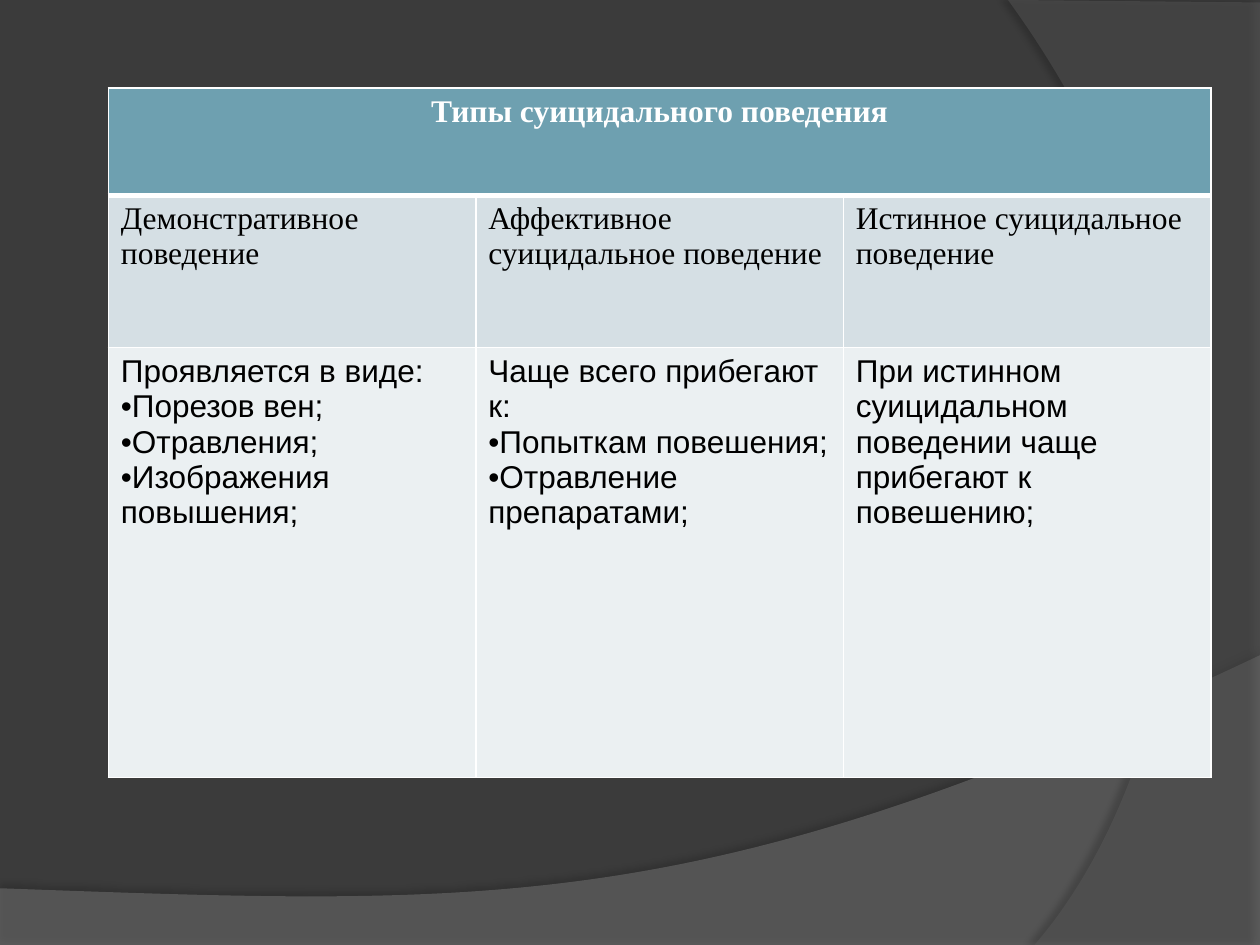
from lxml import etree
from pptx import Presentation
from pptx.dml.color import RGBColor
from pptx.enum.text import PP_ALIGN
from pptx.oxml import parse_xml
from pptx.oxml.ns import qn
from pptx.util import Inches, Pt

CENTER, LEFT = PP_ALIGN.CENTER, PP_ALIGN.LEFT
WIDE, HIGH = 10, 7.5
NS = 'xmlns:a="http://schemas.openxmlformats.org/drawingml/2006/main"'
SERIF, SANS = "Times New Roman", "Arial"
BULLET = "•"

# Table rows: height, fill, font format, text colour, alignment and cell texts
ROWS = [
    (0.85, "6EA0B0", {"name": SERIF, "bold": True}, "FFFFFF", CENTER,
     ["Типы суицидального поведения"]),
    (1.21, "D5DFE4", {"name": SERIF, "bold": False}, "000000", LEFT,
     ["Демонстративное поведение",
      "Аффективное суицидальное поведение",
      "Истинное суицидальное поведение"]),
    (3.41, "EBF0F2", {"name": SANS, "bold": False}, "000000", LEFT,
     ["Проявляется в виде:\n•Порезов вен;\n•Отравления;\n•Изображения повышения;",
      "Чаще всего прибегают к:\n•Попыткам повешения;\n•Отравление препаратами;",
      "При истинном суицидальном поведении чаще прибегают к повешению;"]),
]


def paint(fill, color):
    fill.solid()
    fill.fore_color.rgb = RGBColor.from_string(color)


def bend(shape, pulls):
    """Turn the last straight side into a cubic curve with two pull points."""
    side = list(shape._element.iter(qn("a:lnTo")))[-1]
    side.tag = qn("a:cubicBezTo")
    for i, (x, y) in enumerate(pulls):
        dot = etree.Element(qn("a:pt"), x=str(Inches(x) - shape.left),
                            y=str(Inches(y) - shape.top))
        side.insert(i, dot)


def wave(slide, dots, pulls, color, alpha, shade):
    """Half-clear outline with an outer shadow (alpha, blur, distance, angle)."""
    dots = [(Inches(x), Inches(y)) for x, y in dots]
    pen = slide.shapes.build_freeform(*dots[0], scale=1.0)
    pen.add_line_segments(dots[1:], close=True)
    shape = pen.convert_to_shape()
    bend(shape, pulls)
    paint(shape.fill, color)
    shape.line.fill.background()
    props = shape._element.spPr
    tint = props.find(qn("a:solidFill")).find(qn("a:srgbClr"))
    etree.SubElement(tint, qn("a:alpha"), val=str(alpha * 1000))
    depth, blur, dist, angle = shade
    props.append(parse_xml(
        f'<a:effectLst {NS}><a:outerShdw blurRad="{Pt(blur)}" dist="{Pt(dist)}" '
        f'dir="{angle * 60000}" rotWithShape="0"><a:srgbClr val="000000">'
        f'<a:alpha val="{depth * 1000}"/></a:srgbClr></a:outerShdw></a:effectLst>'))


def frame(cell, top, base):
    """White cell borders; only the top and bottom widths vary."""
    props = cell._tc.get_or_add_tcPr()
    for side, width in {"L": 1, "R": 1, "T": top, "B": base}.items():
        props.append(parse_xml(
            f'<a:ln{side} {NS} w="{Pt(width)}"><a:solidFill>'
            f'<a:srgbClr val="FFFFFF"/></a:solidFill></a:ln{side}>'))


def write(cell, text, font, color, align):
    cell.text = text.replace(BULLET, "")
    for para, line in zip(cell.text_frame.paragraphs, text.split("\n")):
        para.alignment = align
        for run in para.runs:
            for key, value in {"size": Pt(18), **font}.items():
                setattr(run.font, key, value)
            run.font.color.rgb = RGBColor.from_string(color)
        if line.startswith(BULLET):
            props = para._p.get_or_add_pPr()
            props.set("marL", "0")
            props.set("indent", "0")
            etree.SubElement(props, qn("a:buFont"), typeface=SANS)
            etree.SubElement(props, qn("a:buChar"), char=BULLET)


def grid(slide, left, top, width, cols):
    height = sum(row[0] for row in ROWS)
    table = slide.shapes.add_table(
        len(ROWS), cols, *map(Inches, (left, top, width, height))).table
    for col in table.columns:
        col.width = Inches(width / cols)
    table.cell(0, 0).merge(table.cell(0, cols - 1))
    for r, (tall, fill, font, color, align, texts) in enumerate(ROWS):
        table.rows[r].height = Inches(tall)
        for c in range(cols):
            cell = table.cell(r, c)
            frame(cell, 3 if r == 1 else 1, 3 if r == 0 else 1)
            paint(cell.fill, fill)
            if c < len(texts):
                write(cell, texts[c], font, color, align)


def main():
    deck = Presentation()
    deck.slide_width, deck.slide_height = Inches(WIDE), Inches(HIGH)
    slide = deck.slides.add_slide(deck.slide_layouts[6])
    paint(slide.background.fill, "3B3B3B")

    # Backdrop: bottom wave, then right-hand wave
    low = [(0, 7.05), (0, 7.51), (WIDE, 7.51), (WIDE, 5.2), (0, 7.05)]
    wave(slide, low, [(5.59, 7.29), (3.91, 7.19)],
         "7F7F7F", 45, (35, 4, 3.5, 270))
    side = [(WIDE, 0.02), (WIDE, HIGH), (8.21, HIGH), (8, 0)]
    wave(slide, side, [(9.35, 6.19), (10.18, 3)],
         "5E5E5E", 40, (45, 4, 4, 180))

    # Table
    grid(slide, 0.86, 0.7, 8.75, 3)
    deck.save("out.pptx")


if __name__ == "__main__":
    main()
